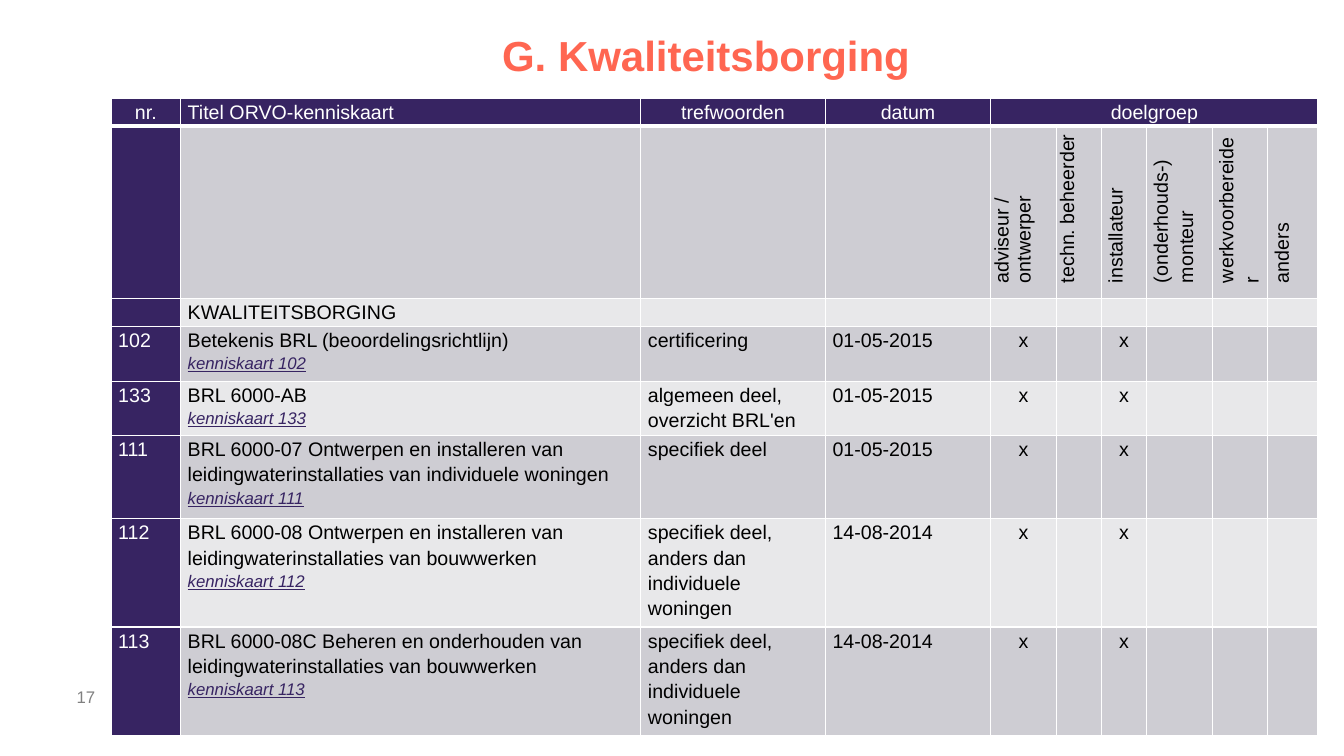
from lxml import etree
from pptx import Presentation
from pptx.dml.color import RGBColor
from pptx.enum.text import MSO_ANCHOR, PP_ALIGN
from pptx.oxml.ns import qn
from pptx.util import Cm, Pt

LEFT, MID = PP_ALIGN.LEFT, PP_ALIGN.CENTER
CENTRE = MSO_ANCHOR.MIDDLE

NAVY, CORAL, GREY = "372462", "FF6651", "808080"
WHITE, BLACK = "FFFFFF", "000000"
BANDS = ["CECDD3", "E8E8EA"]

# Table content: number, title, keywords, date
HEADS = ["nr.", "Titel ORVO-kenniskaart", "trefwoorden", "datum", "doelgroep"]
GROUPS = ["adviseur /\nontwerper", "techn. beheerder", "installateur",
          "(onderhouds-)\nmonteur", "werkvoorbereider", "anders"]
CARDS = [
    ("102", "Betekenis BRL (beoordelingsrichtlijn)",
     "certificering", "01-05-2015"),
    ("133", "BRL 6000-AB",
     "algemeen deel,\noverzicht BRL'en", "01-05-2015"),
    ("111", "BRL 6000-07 Ontwerpen en installeren van "
     "leidingwaterinstallaties van individuele woningen",
     "specifiek deel", "01-05-2015"),
    ("112", "BRL 6000-08 Ontwerpen en installeren van "
     "leidingwaterinstallaties van bouwwerken",
     "specifiek deel,\nanders dan individuele\nwoningen", "14-08-2014"),
    ("113", "BRL 6000-08C Beheren en onderhouden van "
     "leidingwaterinstallaties van bouwwerken",
     "specifiek deel,\nanders dan\nindividuele\nwoningen", "14-08-2014"),
]
MARKED = [4, 6]
COLS = [1.75, 11.6, 4.65, 4.17, 1.65, 1.14, 1.14, 1.65, 1.4, 1.27]
ROWS = [0.66, 4.34, 0.71, 1.39, 1.3, 2.1, 2.57, 2.55]


def color(code):
    return RGBColor.from_string(code)


class Deck:
    """Holds the text style and the current slide."""

    def __init__(self, font, size):
        self.font, self.size = font, size
        self.prs = Presentation()
        self.prs.slide_width, self.prs.slide_height = Cm(33.87), Cm(19.05)
        self.slide = self.prs.slides.add_slide(self.prs.slide_layouts[6])

    def style(self, para, ink, size=None, bold=False, link=False):
        for run in para.runs:
            font = run.font
            font.name, font.size = self.font, Pt(size or self.size)
            font.bold, font.italic, font.underline = bold, link, link
            font.color.rgb = color(ink)

    def text(self, words, box, size, ink, align=LEFT, bold=False):
        frame = self.slide.shapes.add_textbox(*map(Cm, box)).text_frame
        frame.word_wrap = True
        frame.vertical_anchor = CENTRE
        frame.margin_left = frame.margin_right = 0
        frame.margin_top = frame.margin_bottom = 0
        frame.text = words
        para = frame.paragraphs[0]
        para.alignment = align
        self.style(para, ink, size, bold)

    def grid(self, left, top, cols, rows):
        table = self.slide.shapes.add_table(
            len(rows), len(cols), Cm(left), Cm(top),
            Cm(sum(cols)), Cm(sum(rows))).table
        for col, width in zip(table.columns, cols):
            col.width = Cm(width)
        for row, height in zip(table.rows, rows):
            row.height = Cm(height)
        return table

    def border(self, cell, base):
        props = cell._tc.get_or_add_tcPr()
        for side in "LRTB":
            width = base if side == "B" else 1
            line = etree.SubElement(props, qn("a:ln" + side), w=str(Pt(width)))
            fill = etree.SubElement(line, qn("a:solidFill"))
            etree.SubElement(fill, qn("a:srgbClr"), val=WHITE)

    def cell(self, cell, words, fill, ink=BLACK, align=LEFT, base=1):
        self.border(cell, base)
        cell.fill.solid()
        cell.fill.fore_color.rgb = color(fill)
        cell.margin_left = cell.margin_right = Cm(0.18)
        cell.margin_top = cell.margin_bottom = 0
        cell.text_frame.text = words
        for para in cell.text_frame.paragraphs:
            para.alignment, para.line_spacing = align, 1.15
            self.style(para, ink)
            if not words:
                etree.SubElement(para._p, qn("a:endParaRPr"),
                                 sz=str(self.size * 100))

    def turn(self, cell, spacing):
        cell._tc.get_or_add_tcPr().set("vert", "vert270")
        for para in cell.text_frame.paragraphs:
            para.line_spacing = spacing
            para._p.get_or_add_pPr().set("marL", str(Cm(0.2)))


def main():
    deck = Deck("Arial", 14)

    # Page number
    deck.text("17", (1.93, 17.04, 1.8, 1.02), 12, GREY)

    # Table with a merged heading over the target groups
    table = deck.grid(2.8, 2.49, COLS, ROWS)
    body = [[""] * 4 + GROUPS, ["", "KWALITEITSBORGING"] + [""] * 8]
    for card in CARDS:
        marks = ["x" if c in MARKED else "" for c in range(4, len(COLS))]
        body.append(list(card) + marks)

    # Heading row
    table.cell(0, 4).merge(table.cell(0, len(COLS) - 1))
    for c in range(len(COLS)):
        words = HEADS[c] if c < len(HEADS) else ""
        deck.cell(table.cell(0, c), words, NAVY, WHITE,
                  LEFT if c == 1 else MID, 3)

    # Banded rows with a dark first column
    for r, row in enumerate(body, 1):
        for c, words in enumerate(row):
            fill, ink = (BANDS[(r - 1) % 2], BLACK) if c else (NAVY, WHITE)
            align = MID if c > 3 and r > 1 else LEFT
            deck.cell(table.cell(r, c), words, fill, ink, align)

    # Upright group names
    for c in range(4, len(COLS)):
        deck.turn(table.cell(1, c), 1 if c < 6 else 1.15)

    # Card references below the titles
    for r, card in enumerate(CARDS, 3):
        para = table.cell(r, 1).text_frame.add_paragraph()
        para.text = "kenniskaart " + card[0]
        para.line_spacing = 1.15
        deck.style(para, NAVY, 12, link=True)

    # Title
    deck.text("G. Kwaliteitsborging", (2.84, 0.69, 29.92, 1.37), 30, CORAL,
              MID, True)

    deck.prs.save("out.pptx")


if __name__ == "__main__":
    main()
